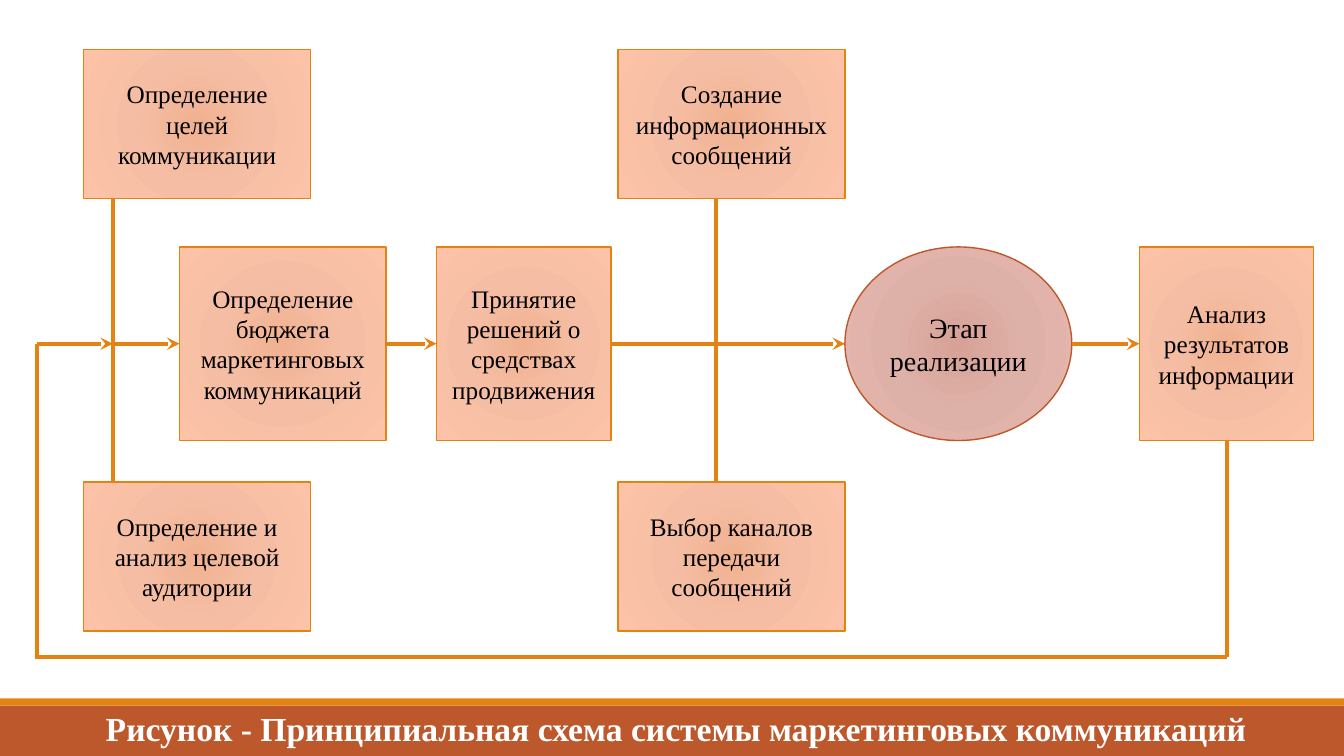
from dataclasses import dataclass

from lxml.etree import SubElement
from pptx import Presentation
from pptx.dml.color import RGBColor
from pptx.enum.shapes import MSO_CONNECTOR, MSO_SHAPE
from pptx.enum.text import MSO_ANCHOR, PP_ALIGN
from pptx.oxml.ns import qn
from pptx.util import Inches, Pt

ORANGE = RGBColor(0xE4, 0x83, 0x12)
RUST = RGBColor(0xBD, 0x58, 0x2C)
BLACK = RGBColor(0x00, 0x00, 0x00)
WHITE = RGBColor(0xFF, 0xFF, 0xFF)
PEACH = (RGBColor(0xF0, 0xB1, 0x91), RGBColor(0xF5, 0xBE, 0xA4), RGBColor(0xFD, 0xC3, 0xA8))
ROSE = (RGBColor(0xD7, 0xA1, 0x97), RGBColor(0xDE, 0xB1, 0xA8), RGBColor(0xE6, 0xB7, 0xAE))
GRADIENT_STOPS = (0, 45, 100)

# Shared levels of the scheme, in inches
WIDTH, HEIGHT = 13.33, 7.5
MIDDLE_TOP, MIDDLE_HEIGHT = 2.45, 1.92
MIDDLE_BOTTOM = MIDDLE_TOP + MIDDLE_HEIGHT
AXIS = MIDDLE_TOP + MIDDLE_HEIGHT / 2
OUTER_WIDTH, OUTER_HEIGHT = 2.25, 1.48
UPPER_TOP, LOWER_TOP = 0.49, 4.78
UPPER_BOTTOM = UPPER_TOP + OUTER_HEIGHT
GOALS_X, MESSAGES_X = 1.12, 7.1
LOOP_LEFT, LOOP_RIGHT, LOOP_BOTTOM = 0.37, 12.17, 6.52


@dataclass
class Stage:
    text: str
    left: float
    top: float
    width: float
    height: float
    kind: MSO_SHAPE = MSO_SHAPE.RECTANGLE
    colors: tuple = PEACH
    outline: RGBColor = ORANGE
    size: int = 18


@dataclass
class Link:
    x1: float
    y1: float
    x2: float
    y2: float
    arrow: bool = False


def middle(text: str, left: float, width: float, **options) -> Stage:
    return Stage(text, left, MIDDLE_TOP, width, MIDDLE_HEIGHT, **options)


def outer(text: str, left: float, top: float) -> Stage:
    return Stage(text, left, top, OUTER_WIDTH, OUTER_HEIGHT)


def flow(start: float, end: float) -> Link:
    return Link(start, AXIS, end, AXIS, arrow=True)


STAGES = [
    middle("Определение бюджета маркетинговых коммуникаций", 1.78, 2.05),
    middle("Принятие решений о средствах продвижения", 4.33, 1.73),
    middle("Анализ результатов информации", 11.3, 1.73),
    middle("Этап реализации", 8.38, 2.25, kind=MSO_SHAPE.OVAL,
           colors=ROSE, outline=RUST, size=20),
    outer("Создание информационных сообщений", 6.13, UPPER_TOP),
    outer("Выбор каналов передачи сообщений", 6.13, LOWER_TOP),
    outer("Определение целей коммуникации", 0.83, UPPER_TOP),
    outer("Определение и анализ целевой аудитории", 0.83, LOWER_TOP),
]

LINKS = [
    flow(3.83, 4.33),
    flow(6.07, 8.38),
    flow(10.63, 11.3),
    flow(LOOP_LEFT, GOALS_X),
    flow(GOALS_X, 1.78),
    Link(GOALS_X, UPPER_BOTTOM, GOALS_X, LOWER_TOP),
    Link(MESSAGES_X, UPPER_BOTTOM, MESSAGES_X, LOWER_TOP),
    Link(LOOP_RIGHT, MIDDLE_BOTTOM, LOOP_RIGHT, LOOP_BOTTOM),
    Link(LOOP_RIGHT, LOOP_BOTTOM, LOOP_LEFT, LOOP_BOTTOM),
    Link(LOOP_LEFT, AXIS, LOOP_LEFT, LOOP_BOTTOM + 0.02),
]


def write_text(shape, text: str, size: int, color: RGBColor,
               bold: bool = False, anchor=MSO_ANCHOR.MIDDLE) -> None:
    frame = shape.text_frame
    frame.word_wrap = True
    frame.vertical_anchor = anchor
    paragraph = frame.paragraphs[0]
    paragraph.alignment = PP_ALIGN.CENTER
    run = paragraph.add_run()
    run.text = text
    font_format = {"name": "Times New Roman", "size": Pt(size), "bold": bold}
    for name, value in font_format.items():
        setattr(run.font, name, value)
    run.font.color.rgb = color


def fill_radial(shape, colors: tuple) -> None:
    shape.fill.gradient()
    gradient = shape._element.spPr.find(qn("a:gradFill"))
    for child in list(gradient):
        gradient.remove(child)
    stops = SubElement(gradient, qn("a:gsLst"))
    for position, color in zip(GRADIENT_STOPS, colors):
        stop = SubElement(stops, qn("a:gs"), pos=str(position * 1000))
        SubElement(stop, qn("a:srgbClr"), val=str(color))
    circle = SubElement(gradient, qn("a:path"), {"path": "circle"})
    SubElement(circle, qn("a:fillToRect"), {side: "100000" for side in "ltrb"})


def draw_stage(slide, stage: Stage) -> None:
    shape = slide.shapes.add_shape(
        stage.kind, Inches(stage.left), Inches(stage.top),
        Inches(stage.width), Inches(stage.height))
    shape.shadow.inherit = False
    fill_radial(shape, stage.colors)
    shape.line.color.rgb = stage.outline
    shape.line.width = Pt(1)
    write_text(shape, stage.text, stage.size, BLACK)


def draw_link(slide, link: Link) -> None:
    connector = slide.shapes.add_connector(
        MSO_CONNECTOR.STRAIGHT, Inches(link.x1), Inches(link.y1),
        Inches(link.x2), Inches(link.y2))
    connector.line.color.rgb = ORANGE
    connector.line.width = Pt(3)
    if link.arrow:
        SubElement(connector.line._get_or_add_ln(), qn("a:tailEnd"), type="stealth")
    SubElement(connector._element.spPr, qn("a:effectLst"))


def draw_band(slide, top: float, height: float, color: RGBColor) -> None:
    band = slide.shapes.add_shape(
        MSO_SHAPE.RECTANGLE, 0, Inches(top), Inches(WIDTH), Inches(height))
    band.shadow.inherit = False
    band.fill.solid()
    band.fill.fore_color.rgb = color
    band.line.fill.background()


def main() -> None:
    presentation = Presentation()
    presentation.slide_width = Inches(WIDTH)
    presentation.slide_height = Inches(HEIGHT)
    slide = presentation.slides.add_slide(presentation.slide_layouts[6])

    # Footer bands
    draw_band(slide, 7, 0.5, RUST)
    draw_band(slide, 6.93, 0.07, ORANGE)

    # Scheme
    for stage in STAGES:
        draw_stage(slide, stage)
    for link in LINKS:
        draw_link(slide, link)

    # Caption
    caption = slide.shapes.add_textbox(Inches(0.56), Inches(6.97), Inches(12.29), Inches(0.5))
    write_text(caption, "Рисунок - Принципиальная схема системы маркетинговых коммуникаций",
               24, WHITE, bold=True, anchor=MSO_ANCHOR.TOP)

    presentation.save("out.pptx")


if __name__ == "__main__":
    main()
